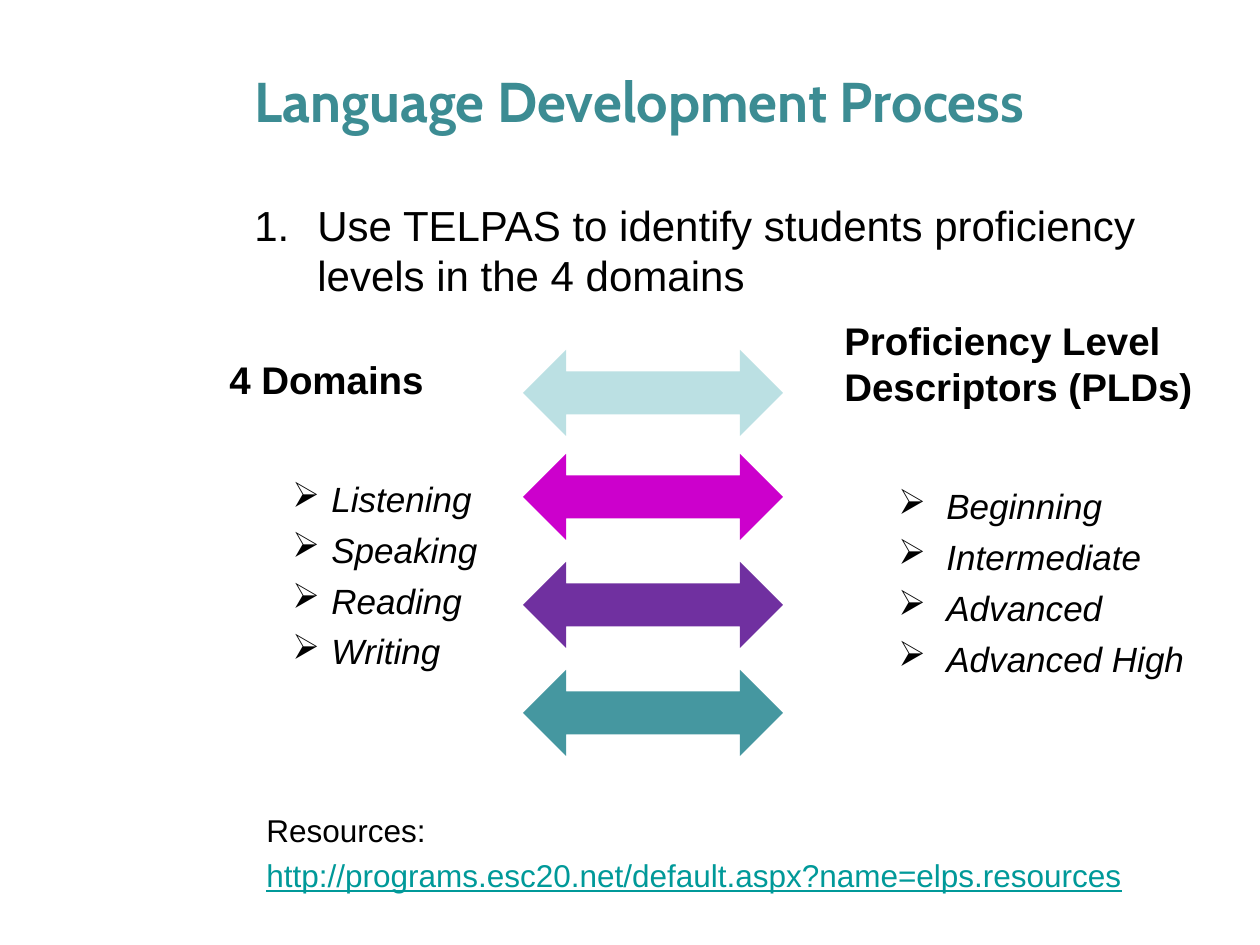
from pptx import Presentation
from pptx.dml.color import RGBColor
from pptx.enum.shapes import MSO_SHAPE
from pptx.enum.text import MSO_ANCHOR, MSO_AUTO_SIZE
from pptx.oxml.ns import qn
from pptx.util import Emu, Pt
from lxml.etree import SubElement

EMU_PER_PX = 914400 / 126
COLORS = {
    "title": "3C8C93",
    "text": "000000",
    "link": "009999",
    "pale": "BBE0E3",
    "magenta": "CC00CC",
    "purple": "7030A0",
    "teal": "4597A0",
}
ARROWS = [("pale", 350), ("magenta", 454), ("purple", 562), ("teal", 670)]
DOMAINS = ["Listening", "Speaking", "Reading", "Writing"]
LEVELS = ["Beginning", "Intermediate", "Advanced", "Advanced High"]


def px(length):
    return Emu(round(length * EMU_PER_PX))


def rgb(name):
    return RGBColor.from_string(COLORS[name])


def add_box(page, left, top, width, height):
    box = page.shapes.add_textbox(px(left), px(top), px(width), px(height))
    box.text_frame.word_wrap = True
    return box.text_frame


def add_marker(para, margin, hang, tag, **attributes):
    """Give a paragraph a hanging indent and a bullet or number."""
    properties = para._p.get_or_add_pPr()
    properties.set("marL", str(px(margin)))
    properties.set("indent", str(-px(hang)))
    SubElement(properties, qn(tag), attributes)


def write(para, text, size, color="text", font="Arial", bold=False,
          italic=False, underline=False, before=0):
    para.text = text
    para.space_before = Pt(before)
    style = para.font
    style.name = font
    style.size = Pt(size)
    style.bold = bold
    style.italic = italic
    style.underline = underline
    style.color.rgb = rgb(color)


def add_list(page, bounds, heading, items, hang):
    frame = add_box(page, *bounds)
    write(frame.paragraphs[0], heading, 22, bold=True)
    for index, item in enumerate(items):
        para = frame.add_paragraph()
        para.level = 1
        add_marker(para, 102, hang, "a:buChar", char="➢")
        write(para, item, 20, italic=True, before=5 if index else 43)


def add_arrow(page, color, top):
    arrow = page.shapes.add_shape(
        MSO_SHAPE.LEFT_RIGHT_ARROW, px(523), px(top), px(260), px(86))
    arrow.shadow.inherit = False
    arrow.fill.solid()
    arrow.fill.fore_color.rgb = rgb(color)
    arrow.line.fill.background()


def main():
    deck = Presentation()
    deck.slide_width, deck.slide_height = px(1260), px(945)
    page = deck.slides.add_slide(deck.slide_layouts[6])

    title = add_box(page, 242, 42, 966, 116)
    title.vertical_anchor = MSO_ANCHOR.MIDDLE
    write(title.paragraphs[0], "Language Development Process", 32,
          color="title", font="Cabin", bold=True)

    add_list(page, (217, 350, 292, 488), "4 Domains", DOMAINS, 39)
    add_list(page, (832, 311, 396, 490),
             "Proficiency Level Descriptors (PLDs)", LEVELS, 48)

    step = add_box(page, 242, 193, 966, 120).paragraphs[0]
    add_marker(step, 63, 63, "a:buAutoNum", type="arabicPeriod")
    write(step, "Use TELPAS to identify students proficiency "
          "levels in the 4 domains", 24)

    for color, top in ARROWS:
        add_arrow(page, color, top)

    resources = add_box(page, 254, 805, 940, 97)
    resources.auto_size = MSO_AUTO_SIZE.SHAPE_TO_FIT_TEXT
    write(resources.paragraphs[0], "Resources:", 18)
    write(resources.add_paragraph(),
          "http://programs.esc20.net/default.aspx?name=elps.resources", 18,
          color="link", underline=True, before=4)

    deck.save("out.pptx")


if __name__ == "__main__":
    main()
